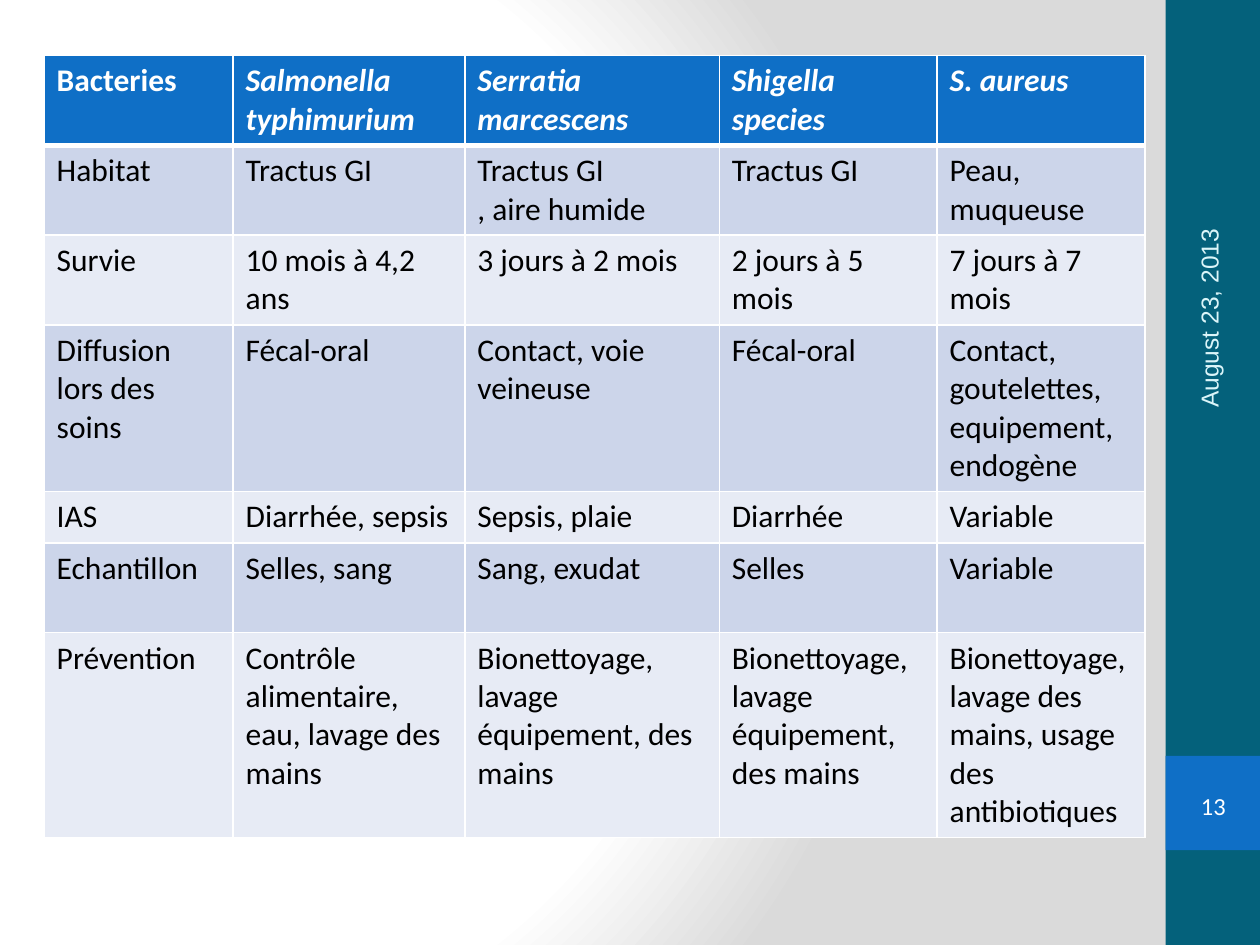
from lxml import etree
from pptx import Presentation
from pptx import oxml
from pptx import util as u
from pptx.dml.color import RGBColor
from pptx.enum import shapes, text
from pptx.oxml import ns

COLOURS = {"white": "FFFFFF", "grey": "DADADA", "teal": "04617B", "blue": "0F6FC6",
           "pale": "DBF5F9", "black": "000000", "band": "CCD5EA", "light": "E7EBF5"}


def write_text(frame, content, colour, **formats):
    """Put one paragraph per line of content into the frame."""
    frame.text = content
    for paragraph in frame.paragraphs:
        font = paragraph.runs[0].font
        font.color.rgb = RGBColor.from_string(COLOURS[colour])
        for name, value in formats.items():
            setattr(font, name, value)


def add_border(cell, side, points):
    """Draw a white border on one side of a cell."""
    properties = cell._tc.get_or_add_tcPr()
    line = etree.SubElement(properties, ns.qn(f"a:{side}"), w=str(u.Pt(points)))
    fill = etree.SubElement(line, ns.qn("a:solidFill"))
    etree.SubElement(fill, ns.qn("a:srgbClr"), val=COLOURS["white"])


presentation = Presentation()
presentation.slide_width = u.Cm(25.4)
presentation.slide_height = u.Cm(19.05)
slide = presentation.slides.add_slide(presentation.slide_layouts[6])

# Background: radial gradient
stops = "".join(f'<a:gs pos="{position}"><a:srgbClr val="{COLOURS[name]}"/></a:gs>'
                for position, name in ((0, "white"), (75000, "white"), (100000, "grey")))
background = oxml.parse_xml(
    f'<p:bg {ns.nsdecls("p", "a")}><p:bgPr><a:gradFill rotWithShape="1">'
    f'<a:gsLst>{stops}</a:gsLst><a:path path="circle">'
    '<a:fillToRect l="20000" t="50000" r="100000" b="50000"/></a:path>'
    '</a:gradFill><a:effectLst/></p:bgPr></p:bg>')
slide.element.cSld.insert(0, background)

# Side band and page number block
for top, height, colour in ((0, 19.05, "teal"), (15.24, 1.9, "blue")):
    shape = slide.shapes.add_shape(shapes.MSO_SHAPE.RECTANGLE, u.Cm(23.5), u.Cm(top),
                                   u.Cm(1.9), u.Cm(height))
    shape.shadow.inherit = False
    shape.fill.solid()
    shape.fill.fore_color.rgb = RGBColor.from_string(COLOURS[colour])
    shape.line.fill.background()

# Table of bacteria
rows = [
    ["Bacteries", "Salmonella typhimurium", "Serratia marcescens", "Shigella species",
     "S. aureus"],
    ["Habitat", "Tractus GI", "Tractus GI\n, aire humide", "Tractus GI", "Peau, muqueuse"],
    ["Survie", "10 mois à 4,2 ans", "3 jours à 2 mois", "2 jours à 5 mois",
     "7 jours à 7 mois"],
    ["Diffusion lors des soins", "Fécal-oral", "Contact, voie veineuse", "Fécal-oral",
     "Contact, goutelettes, equipement, endogène"],
    ["IAS", "Diarrhée, sepsis", "Sepsis, plaie", "Diarrhée", "Variable"],
    ["Echantillon", "Selles, sang", "Sang, exudat", "Selles", "Variable"],
    ["Prévention", "Contrôle alimentaire, eau, lavage des mains",
     "Bionettoyage, lavage équipement, des mains",
     "Bionettoyage, lavage équipement, des mains",
     "Bionettoyage, lavage des mains, usage des antibiotiques"],
]
column_widths = [3.81, 4.67, 5.13, 4.39, 4.19]
row_heights = [1.81, 1.81, 1.81, 3.35, 1.04, 1.81, 4.11]
table = slide.shapes.add_table(len(rows), len(column_widths), u.Cm(0.89), u.Cm(1.12),
                               u.Cm(sum(column_widths)), u.Cm(sum(row_heights))).table
for column, width in zip(table.columns, column_widths):
    column.width = u.Cm(width)
for row, height in zip(table.rows, row_heights):
    row.height = u.Cm(height)

for row_index, row in enumerate(rows):
    header = row_index == 0
    fill_name = "blue" if header else ("light", "band")[row_index % 2]
    for column_index, content in enumerate(row):
        cell = table.cell(row_index, column_index)
        write_text(cell.text_frame, content, "white" if header else "black",
                   name="Calibri", size=u.Pt(18), bold=header,
                   italic=header and column_index > 0)
        borders = {"lnL": 1, "lnR": 1, "lnT": 3 if row_index == 1 else 1,
                   "lnB": 3 if header else 1}
        for side, points in borders.items():
            add_border(cell, side, points)
        cell.fill.solid()
        cell.fill.fore_color.rgb = RGBColor.from_string(COLOURS[fill_name])

# Date running up the side band
date = slide.shapes.add_textbox(u.Cm(20.98), u.Cm(4.57), u.Cm(6.78), u.Cm(1.02))
date.rotation = 270
date.text_frame.word_wrap = True
date.text_frame.vertical_anchor = text.MSO_ANCHOR.MIDDLE
write_text(date.text_frame, "August 23, 2013", "pale", name="Arial", size=u.Pt(14))

# Page number
number = slide.shapes.add_shape(shapes.MSO_SHAPE.DOUBLE_BRACKET, u.Cm(23.7), u.Cm(15.7),
                                u.Cm(1.52), u.Cm(1.09))
number.adjustments[0] = 0.18
number.shadow.inherit = False
number.fill.background()
number.line.fill.background()
frame_formats = {"margin_left": 0, "margin_top": 0, "margin_right": 0, "margin_bottom": 0,
                 "vertical_anchor": text.MSO_ANCHOR.MIDDLE, "word_wrap": True}
for name, value in frame_formats.items():
    setattr(number.text_frame, name, value)
write_text(number.text_frame, "13", "white", name="Calibri", size=u.Pt(14))
number.text_frame.paragraphs[0].alignment = text.PP_ALIGN.CENTER

presentation.save("out.pptx")
